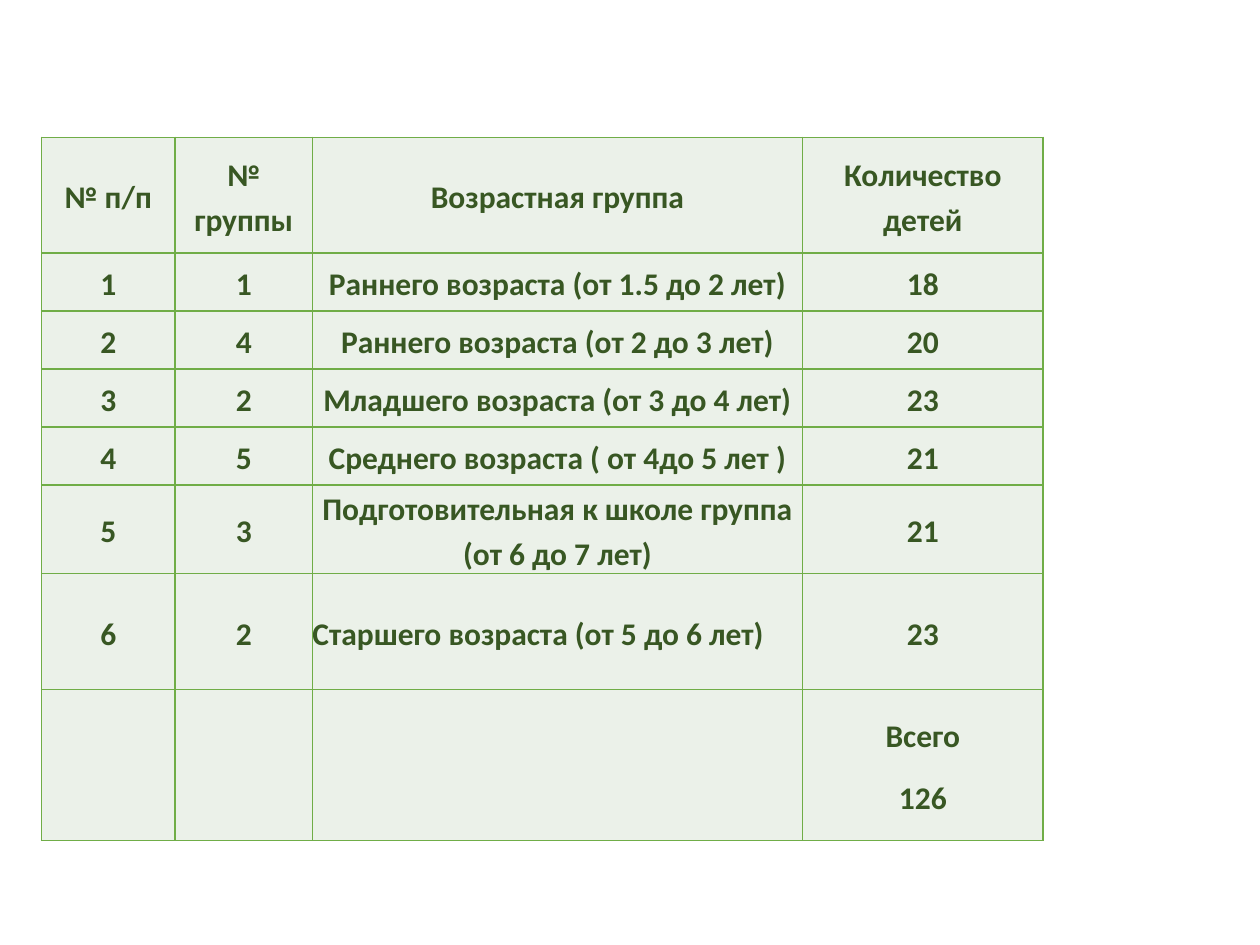
import dataclasses
import pptx
import pptx.dml.color
import pptx.enum.text
import pptx.oxml
import pptx.oxml.ns
import pptx.util
import lxml.etree

Inches = pptx.util.Inches
Pt = pptx.util.Pt
Align = pptx.enum.text.PP_ALIGN


@dataclasses.dataclass(frozen=True)
class Theme:
    font: str = "Calibri"
    size: int = 18
    text: str = "385723"
    fill: str = "EBF1E9"
    line: str = "70AD47"
    width: int = 1
    gap: int = 5
    lead: float = 1.15


THEME = Theme()
COLS = [1.06, 1.09, 3.89, 1.91]
ROWS = [0.92] + [0.46] * 5 + [0.92, 1.2]
GROUPS = [
    ["№ п/п", "№ группы", "Возрастная группа", "Количество детей"],
    ["1", "1", "Раннего возраста (от 1.5 до 2 лет)", "18"],
    ["2", "4", "Раннего возраста (от 2 до 3 лет)", "20"],
    ["3", "2", "Младшего возраста (от 3 до 4 лет)", "23"],
    ["4", "5", "Среднего возраста ( от 4до 5 лет )", "21"],
    ["5", "3", "Подготовительная к школе группа (от 6 до 7 лет)", "21"],
    ["6", "2", "Старшего возраста (от 5 до 6 лет)", "23"],
    ["", "", "", "Всего\n126"],
]
LEFT = (6, 2)


def color(code):
    return pptx.dml.color.RGBColor.from_string(code)


def border(cell):
    props = cell._tc.get_or_add_tcPr()
    tag = pptx.oxml.ns.qn
    for index, side in enumerate(("lnL", "lnR", "lnT", "lnB")):
        line = lxml.etree.Element(tag("a:" + side), w=str(Pt(THEME.width)))
        fill = lxml.etree.SubElement(line, tag("a:solidFill"))
        lxml.etree.SubElement(fill, tag("a:srgbClr"), val=THEME.line)
        props.insert(index, line)


def write(frame, text, align):
    for index, words in enumerate(text.split("\n")):
        para = frame.add_paragraph() if index else frame.paragraphs[0]
        para.alignment = align
        para.line_spacing = THEME.lead
        para.space_before = Pt(THEME.gap if index else 0)
        para.space_after = Pt(THEME.gap)
        if words:
            run = para.add_run()
            run.text = words
            run.font.name = THEME.font
            run.font.size = Pt(THEME.size)
            run.font.bold = True
            run.font.color.rgb = color(THEME.text)


def style(cell):
    cell.margin_left = cell.margin_right = 0
    cell.margin_top = cell.margin_bottom = 0
    cell.vertical_anchor = pptx.enum.text.MSO_ANCHOR.MIDDLE
    cell.fill.solid()
    cell.fill.fore_color.rgb = color(THEME.fill)
    border(cell)


def grid(slide):
    table = slide.shapes.add_table(
        len(ROWS), len(COLS), Inches(0.33), Inches(1.09),
        Inches(sum(COLS)), Inches(sum(ROWS))).table
    for column, width in zip(table.columns, COLS):
        column.width = Inches(width)
    for row, height in zip(table.rows, ROWS):
        row.height = Inches(height)
    for r, group in enumerate(GROUPS):
        for c, text in enumerate(group):
            cell = table.cell(r, c)
            style(cell)
            align = Align.LEFT if (r, c) == LEFT else Align.CENTER
            write(cell.text_frame, text, align)


def main():
    deck = pptx.Presentation()
    deck.slide_width = Inches(10)
    deck.slide_height = Inches(7.5)
    slide = deck.slides.add_slide(deck.slide_layouts[6])
    grid(slide)
    deck.save("out.pptx")


if __name__ == "__main__":
    main()
